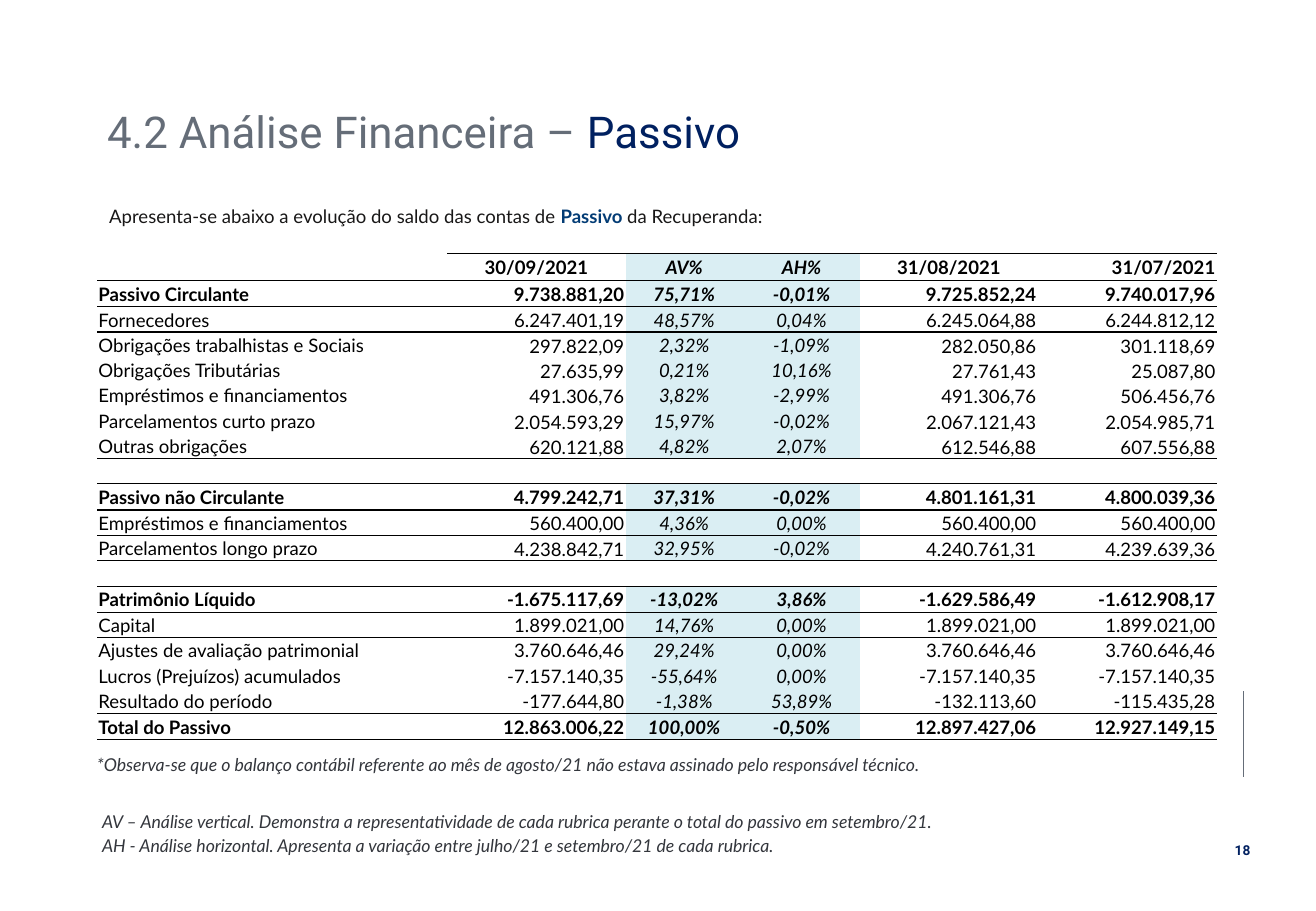
import lxml.etree
import pptx
import pptx.dml.color
import pptx.enum.shapes
import pptx.enum.text
import pptx.oxml.ns
import pptx.util

RGBColor = pptx.dml.color.RGBColor
Align = pptx.enum.text.PP_ALIGN
Anchor = pptx.enum.text.MSO_ANCHOR

PX = 7620  # EMU per pixel, 120 px to the inch
INDENT = 37
NO_STYLE = "{2D5ABB26-0587-4C30-8999-92F81FD0307C}"

GRAY = RGBColor(0x65, 0x6D, 0x78)
NAVY = RGBColor(0x00, 0x20, 0x60)
BLUE = RGBColor(0x03, 0x3C, 0x75)
INK = RGBColor(0x18, 0x17, 0x17)
NOTE = RGBColor(0x33, 0x36, 0x3C)
BLACK = RGBColor(0x00, 0x00, 0x00)
WHITE = RGBColor(0xFF, 0xFF, 0xFF)
PALE = RGBColor(0xDA, 0xEE, 0xF3)

COLUMNS = [346, 176, 116, 116, 175, 177]
ROW_HEIGHTS = {"header": 27, "section": 26, "item": 25, "gap": 25}
PERCENT_COLUMNS = (2, 3)
LOW_ROWS = {2, 3, 4, 5, 6, 7, 11}  # rows whose amounts sit at the bottom

ROWS = [
    ("header", "", "30/09/2021", "AV%", "AH%", "31/08/2021", "31/07/2021"),
    ("section", "Passivo Circulante", "9.738.881,20", "75,71%", "-0,01%", "9.725.852,24", "9.740.017,96"),
    ("item", "Fornecedores", "6.247.401,19", "48,57%", "0,04%", "6.245.064,88", "6.244.812,12"),
    ("item", "Obrigações trabalhistas e Sociais", "297.822,09", "2,32%", "-1,09%", "282.050,86", "301.118,69"),
    ("item", "Obrigações Tributárias", "27.635,99", "0,21%", "10,16%", "27.761,43", "25.087,80"),
    ("item", "Empréstimos e financiamentos", "491.306,76", "3,82%", "-2,99%", "491.306,76", "506.456,76"),
    ("item", "Parcelamentos curto prazo", "2.054.593,29", "15,97%", "-0,02%", "2.067.121,43", "2.054.985,71"),
    ("item", "Outras obrigações", "620.121,88", "4,82%", "2,07%", "612.546,88", "607.556,88"),
    ("gap", "", "", "", "", "", ""),
    ("section", "Passivo não Circulante", "4.799.242,71", "37,31%", "-0,02%", "4.801.161,31", "4.800.039,36"),
    ("item", "Empréstimos e financiamentos", "560.400,00", "4,36%", "0,00%", "560.400,00", "560.400,00"),
    ("item", "Parcelamentos longo prazo", "4.238.842,71", "32,95%", "-0,02%", "4.240.761,31", "4.239.639,36"),
    ("gap", "", "", "", "", "", ""),
    ("section", "Patrimônio Líquido", "-1.675.117,69", "-13,02%", "3,86%", "-1.629.586,49", "-1.612.908,17"),
    ("item", "Capital", "1.899.021,00", "14,76%", "0,00%", "1.899.021,00", "1.899.021,00"),
    ("item", "Ajustes de avaliação patrimonial", "3.760.646,46", "29,24%", "0,00%", "3.760.646,46", "3.760.646,46"),
    ("item", "Lucros (Prejuízos) acumulados", "-7.157.140,35", "-55,64%", "0,00%", "-7.157.140,35", "-7.157.140,35"),
    ("item", "Resultado do período", "-177.644,80", "-1,38%", "53,89%", "-132.113,60", "-115.435,28"),
    ("section", "Total do Passivo", "12.863.006,22", "100,00%", "-0,50%", "12.897.427,06", "12.927.149,15"),
]


def px(*lengths):
    return [pptx.util.Emu(length * PX) for length in lengths]


def add_span(para, text, font, size, color, bold=False, italic=False):
    span = para.add_run()
    span.text = text
    span.font.name = font
    span.font.size = pptx.util.Pt(size)
    span.font.color.rgb = color
    span.font.bold = bold
    span.font.italic = italic


def fill_frame(frame, paragraphs, align, spacing=1.0, indent=0, wrap=True):
    """Each paragraph is a list of runs, given as add_span arguments."""
    frame.word_wrap = wrap
    frame.vertical_anchor = Anchor.TOP
    for number, spans in enumerate(paragraphs):
        para = frame.add_paragraph() if number else frame.paragraphs[0]
        para.alignment = align
        para.line_spacing = spacing
        if indent:
            para._p.get_or_add_pPr().set("indent", str(indent * PX))
        for span in spans:
            add_span(para, *span)


def add_text(page, place, paragraphs, align, **layout):
    box = page.shapes.add_textbox(*px(*place))
    fill_frame(box.text_frame, paragraphs, align, **layout)


def add_panel(page, place, paragraphs, align, **layout):
    panel = page.shapes.add_shape(pptx.enum.shapes.MSO_SHAPE.RECTANGLE, *px(*place))
    panel.shadow.inherit = False
    panel.fill.solid()
    panel.fill.fore_color.rgb = WHITE
    panel.line.fill.background()
    fill_frame(panel.text_frame, paragraphs, align, **layout)


def add_rule(page, start, end, color, width):
    rule = page.shapes.add_connector(
        pptx.enum.shapes.MSO_CONNECTOR.STRAIGHT, *px(*start, *end))
    rule.line.color.rgb = color
    rule.line.width = pptx.util.Pt(width)
    lxml.etree.SubElement(rule._element.spPr, pptx.oxml.ns.qn("a:effectLst"))


def add_border(cell, side, width):
    qn = pptx.oxml.ns.qn
    border = lxml.etree.SubElement(cell._tc.get_or_add_tcPr(), qn("a:" + side))
    border.set("w", str(pptx.util.Pt(width)))
    fill = lxml.etree.SubElement(border, qn("a:solidFill"))
    lxml.etree.SubElement(fill, qn("a:srgbClr")).set("val", str(BLACK))


def line_below(row):
    """Width of the line under a row; row -1 is the top of the table."""
    if row == -1:
        return 0.5
    kind = ROWS[row][0]
    if kind == "section":
        return 1
    return 0.5 if kind != "item" or ROWS[row + 1][0] != "item" else 0


def cell_align(row, column):
    if column == 0:
        return Align.LEFT
    if column in PERCENT_COLUMNS or (row == 0 and column < 5):
        return Align.CENTER
    return Align.RIGHT


def format_cell(cell, row, column):
    kind, text = ROWS[row][0], ROWS[row][column + 1]
    percent = column in PERCENT_COLUMNS
    cell.margin_left = cell.margin_right = cell.margin_top = pptx.util.Inches(0.01)
    cell.margin_bottom = 0
    low = row in LOW_ROWS and column > 0 and not percent
    cell.vertical_anchor = Anchor.BOTTOM if low else Anchor.MIDDLE

    for side, width in (("lnT", line_below(row - 1)), ("lnB", line_below(row))):
        corner = row == 0 and column == 0 and side == "lnT"
        if width and not corner:
            add_border(cell, side, width)

    if percent and kind != "gap":
        cell.fill.solid()
        cell.fill.fore_color.rgb = PALE
    else:
        cell.fill.background()

    para = cell.text_frame.paragraphs[0]
    para.alignment = cell_align(row, column)
    if text:
        add_span(para, text, "Lato", 11, BLACK, kind in ("header", "section"), percent)
    else:
        end = lxml.etree.SubElement(para._p, pptx.oxml.ns.qn("a:endParaRPr"))
        end.set("sz", "1100")


def add_balance(page, left, top):
    heights = [ROW_HEIGHTS[row[0]] for row in ROWS]
    frame = page.shapes.add_table(
        len(ROWS), len(COLUMNS), *px(left, top, sum(COLUMNS), sum(heights)))
    table = frame.table
    table.first_row = table.horz_banding = False
    table._tbl.tblPr.find(pptx.oxml.ns.qn("a:tableStyleId")).text = NO_STYLE
    for column, width in zip(table.columns, px(*COLUMNS)):
        column.width = width
    for row, height in zip(table.rows, px(*heights)):
        row.height = height
    for row in range(len(ROWS)):
        for column in range(len(COLUMNS)):
            format_cell(table.cell(row, column), row, column)


def main():
    deck = pptx.Presentation()
    deck.slide_width, deck.slide_height = px(1300, 900)
    page = deck.slides.add_slide(deck.slide_layouts[6])

    # Page number and side rule
    add_rule(page, (1228, 683), (1228, 768), GRAY, 0.5)
    add_text(page, (1207, 826, 41, 29), [[("18", "Roboto", 8.1, NAVY, True)]],
             Align.CENTER, wrap=False)

    # Title and introduction
    add_text(page, (94, 103, 982, 64), [[
        ("4.2 Análise Financeira – ", "Roboto", 26, GRAY),
        ("Passivo", "Roboto", 26, NAVY)]], Align.LEFT, spacing=0.9)
    add_text(page, (96, 186, 1044, 42), [[
        ("Apresenta-se abaixo a evolução do saldo das contas de ", "Lato", 11, INK),
        ("Passivo ", "Lato", 11, BLUE, True),
        ("da Recuperanda:", "Lato", 11, INK)]], Align.JUSTIFY, spacing=1.5)

    # Notes under the table
    legend, remark = [[[(text, "Lato", 10.5, NOTE, False, True)] for text in texts] for texts in (
        ["AV – Análise vertical. Demonstra a representatividade de cada rubrica perante o total do passivo em setembro/21.",
         "AH - Análise horizontal. Apresenta a variação entre julho/21 e setembro/21 de cada rubrica."],
        ["*Observa-se que o balanço contábil referente ao mês de agosto/21 não estava assinado pelo responsável técnico."])]
    add_text(page, (52, 792, 1044, 60), legend, Align.JUSTIFY, spacing=1.14, indent=INDENT)
    add_panel(page, (47, 736, 1044, 35), remark, Align.JUSTIFY, spacing=1.14, indent=INDENT)

    # Liabilities table
    add_balance(page, 96, 250)

    deck.save("out.pptx")


if __name__ == "__main__":
    main()
